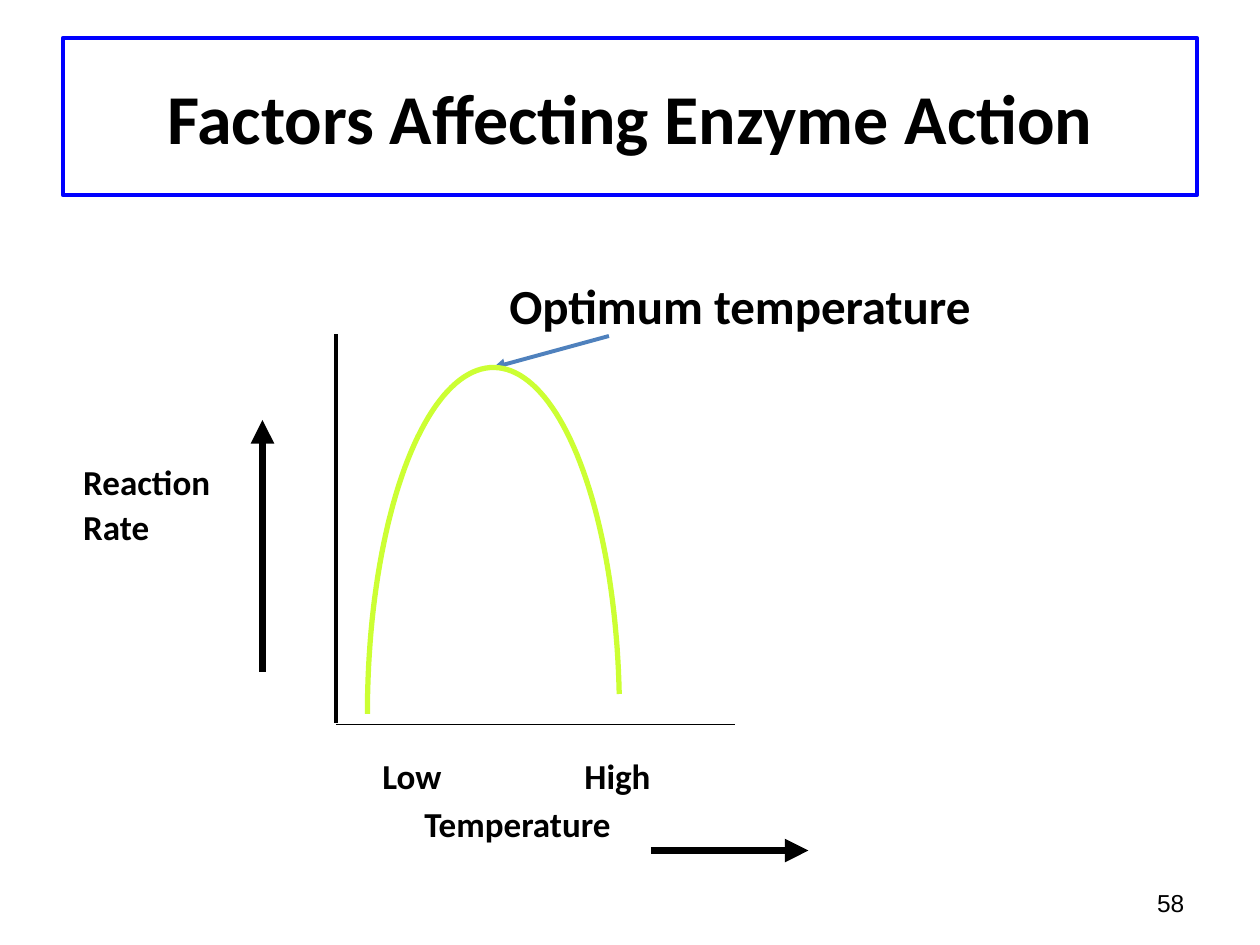
"""Slide on how temperature affects the rate of enzyme action."""
from math import cos, radians, sin

from lxml.etree import SubElement
from pptx import Presentation
from pptx.dml.color import RGBColor as RGB
from pptx.enum.shapes import MSO_CONNECTOR as CONN, MSO_SHAPE as SHAPE
from pptx.enum.text import MSO_ANCHOR as ANCHOR, PP_ALIGN as ALIGN
from pptx.oxml.ns import qn
from pptx.util import Pt

THEME = {
    "font": "Calibri", "number_font": "Arial",
    "text": RGB(0, 0, 0), "frame": RGB(0, 0, 255),
    "curve": RGB(204, 255, 51), "pointer": RGB(79, 129, 189),
    "title": 40, "callout": 28, "label": 20, "number": 14,
}
TITLE = ("Factors Affecting Enzyme Action", (36, 21.6, 648, 90))
LABELS = [
    ("Optimum temperature", "callout", (291, 157.3, 290, 34)),
    ("Reaction\nRate", "label", (47.5, 263.3, 90, 50)),
    ("Low", "label", (218.5, 431.3, 50, 25)),
    ("High", "label", (334, 431.3, 55, 25)),
    ("Temperature", "label", (242.5, 458.7, 125, 25)),
]
NUMBER = ("58", (516, 507.5, 160.8, 20))
LINES = [
    ((192, 191), (192, 413), "text", 2.25, False),
    ((192, 414), (420, 414), "text", 0.75, False),
    ((348, 192), (282, 210), "pointer", 2.25, True),
    ((150, 384), (150, 240), "text", 4.5, True),
    ((372, 486), (462, 486), "text", 4.5, True),
]
CURVE = {"center": (282, 408), "radii": (72, 198), "angles": (3.3, 180), "steps": 90}


def write(s, text, size, font="font", bold=True, align=ALIGN.LEFT, anchor=ANCHOR.TOP):
    tf = s.text_frame
    tf.text = text
    tf.word_wrap = True
    tf.vertical_anchor = anchor
    tf.margin_left = tf.margin_right = tf.margin_top = tf.margin_bottom = 0
    for p in tf.paragraphs:
        p.alignment = align
        p.space_after = Pt(1.3)
        for r in p.runs:
            r.font.name, r.font.size, r.font.bold = THEME[font], Pt(THEME[size]), bold
            r.font.color.rgb = THEME["text"]


def stroke(s, color, width):
    s.line.color.rgb = THEME[color]
    s.line.width = Pt(width)


def add_title(shapes, text, box):
    s = shapes.add_shape(SHAPE.RECTANGLE, *map(Pt, box))
    s.shadow.inherit = False
    s.fill.background()
    stroke(s, "frame", 2.25)
    write(s, text, "title", align=ALIGN.CENTER, anchor=ANCHOR.MIDDLE)


def add_line(shapes, start, end, color, width, arrow):
    s = shapes.add_connector(CONN.STRAIGHT, *map(Pt, start + end))
    stroke(s, color, width)
    if arrow:
        SubElement(s.line._get_or_add_ln(), qn("a:tailEnd"), type="triangle")
    SubElement(s._element.spPr, qn("a:effectLst"))


def add_curve(shapes, center, radii, angles, steps):
    (cx, cy), (rx, ry), (first, last) = center, radii, angles
    turns = [radians(first + (last - first) * i / steps) for i in range(steps + 1)]
    points = [(Pt(cx + rx * cos(t)), Pt(cy - ry * sin(t))) for t in turns]
    builder = shapes.build_freeform(*points[0])
    builder.add_line_segments(points[1:], close=False)
    s = builder.convert_to_shape()
    s.shadow.inherit = False
    s.fill.background()
    stroke(s, "curve", 3)


def main():
    prs = Presentation()
    prs.slide_width, prs.slide_height = Pt(720), Pt(540)
    shapes = prs.slides.add_slide(prs.slide_layouts[6]).shapes
    add_title(shapes, *TITLE)
    for text, size, box in LABELS:
        write(shapes.add_textbox(*map(Pt, box)), text, size)
    text, box = NUMBER
    write(shapes.add_textbox(*map(Pt, box)), text, "number", "number_font", False, ALIGN.RIGHT)
    for line in LINES:
        add_line(shapes, *line)
    add_curve(shapes, **CURVE)
    prs.save("out.pptx")


if __name__ == "__main__":
    main()
